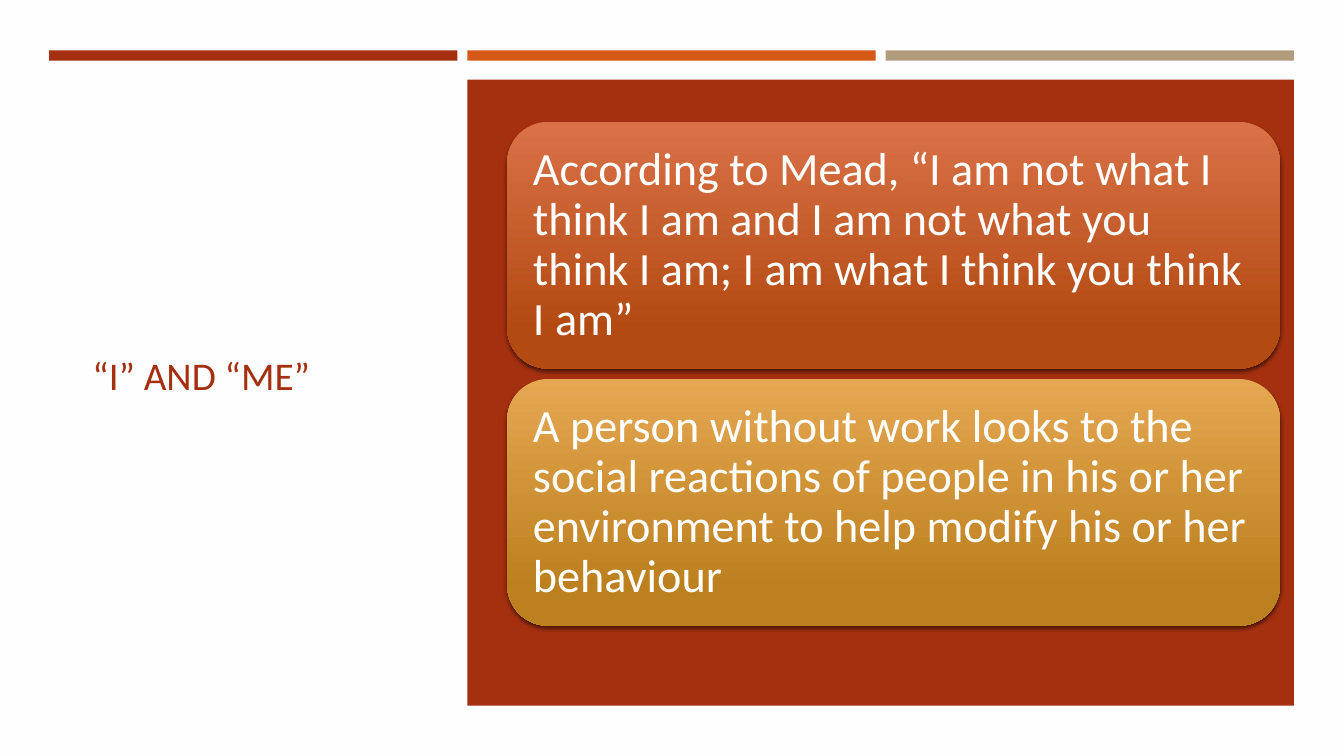
from dataclasses import dataclass

import lxml.etree
import pptx
import pptx.dml.color
import pptx.enum.shapes
import pptx.enum.text
import pptx.oxml.ns
import pptx.shapes.autoshape
import pptx.slide
import pptx.text.text
import pptx.util

Cm = pptx.util.Cm
SHAPES = pptx.enum.shapes.MSO_SHAPE

COLORS = {
    "paper": "FFFEFF",
    "rust": "A5300F",
    "orange": "D55816",
    "sand": "B19C7D",
    "white": "FFFFFF",
    "shadow": "000000",
    "orange_light": "DA7148",
    "orange_dark": "B34A12",
    "gold_light": "E5A751",
    "gold_dark": "BD801F",
}
FONT = "Calibri"
LEFT = 1.24
BAR_WIDTH = 10.29
BAR_PITCH = 10.54
CARD_TOP = 3.07
CARD_HEIGHT = 6.22
CARD_PITCH = 6.48


@dataclass
class Area:
    left: float
    top: float
    width: float
    height: float

    def lengths(self) -> tuple[int, int, int, int]:
        return Cm(self.left), Cm(self.top), Cm(self.width), Cm(self.height)


@dataclass
class Card:
    text: str
    light: str
    dark: str


CARDS = [
    Card(
        "According to Mead, “I am not what I think I am and I am not what you "
        "think I am; I am what I think you think I am”",
        "orange_light",
        "orange_dark",
    ),
    Card(
        "A person without work looks to the social reactions of people in his "
        "or her environment to help modify his or her behaviour",
        "gold_light",
        "gold_dark",
    ),
]


def color(name: str) -> pptx.dml.color.RGBColor:
    return pptx.dml.color.RGBColor.from_string(COLORS[name])


def write_text(
    frame: pptx.text.text.TextFrame, text: str, size: float, ink: str
) -> pptx.text.text._Paragraph:
    frame.word_wrap = True
    frame.vertical_anchor = pptx.enum.text.MSO_ANCHOR.MIDDLE
    para = frame.paragraphs[0]
    para.alignment = pptx.enum.text.PP_ALIGN.LEFT
    span = para.add_run()
    span.text = text
    span.font.name = FONT
    span.font.size = pptx.util.Pt(size)
    span.font.color.rgb = color(ink)
    return para


def draw_block(page: pptx.slide.Slide, area: Area, fill: str) -> None:
    block = page.shapes.add_shape(SHAPES.RECTANGLE, *area.lengths())
    block.shadow.inherit = False
    block.fill.solid()
    block.fill.fore_color.rgb = color(fill)
    block.line.fill.background()


def add_shadow(shape: pptx.shapes.autoshape.Shape) -> None:
    shape.shadow.inherit = False
    qn = pptx.oxml.ns.qn
    effects = shape.element.spPr.find(qn("a:effectLst"))
    outer = lxml.etree.SubElement(
        effects,
        qn("a:outerShdw"),
        blurRad=str(pptx.util.Pt(3)),
        dist=str(pptx.util.Pt(2)),
        dir="5400000",
        rotWithShape="0",
    )
    tint = lxml.etree.SubElement(outer, qn("a:srgbClr"), val=COLORS["shadow"])
    lxml.etree.SubElement(tint, qn("a:alpha"), val="55000")


def draw_card(page: pptx.slide.Slide, area: Area, card: Card) -> None:
    box = page.shapes.add_shape(SHAPES.ROUNDED_RECTANGLE, *area.lengths())
    add_shadow(box)
    box.line.fill.background()
    box.fill.gradient()
    box.fill.gradient_angle = 270
    stops = zip(box.fill.gradient_stops, (card.light, card.dark), (0, 0.84))
    for stop, name, position in stops:
        stop.color.rgb = color(name)
        stop.position = position
    frame = box.text_frame
    frame.margin_left = frame.margin_right = Cm(0.35)
    frame.margin_top = frame.margin_bottom = Cm(0.35)
    para = write_text(frame, card.text, 33, "white")
    para.line_spacing = 0.9


def main() -> None:
    deck = pptx.Presentation()
    deck.slide_width = Cm(33.87)
    deck.slide_height = Cm(19.05)
    page = deck.slides.add_slide(deck.slide_layouts[6])
    page.background.fill.solid()
    page.background.fill.fore_color.rgb = color("paper")

    title = page.shapes.add_textbox(*Area(2.08, 2.9, 8.48, 13.08).lengths())
    write_text(title.text_frame, "“I” AND “ME”", 28, "rust")

    for index, name in enumerate(("rust", "orange", "sand")):
        bar = Area(LEFT + index * BAR_PITCH, 1.27, BAR_WIDTH, 0.26)
        draw_block(page, bar, name)

    panel_width = BAR_PITCH + BAR_WIDTH
    draw_block(page, Area(LEFT + BAR_PITCH, 2.01, panel_width, 15.77), "rust")

    for index, card in enumerate(CARDS):
        top = CARD_TOP + index * CARD_PITCH
        draw_card(page, Area(12.78, top, 19.48, CARD_HEIGHT), card)

    deck.save("out.pptx")


if __name__ == "__main__":
    main()
